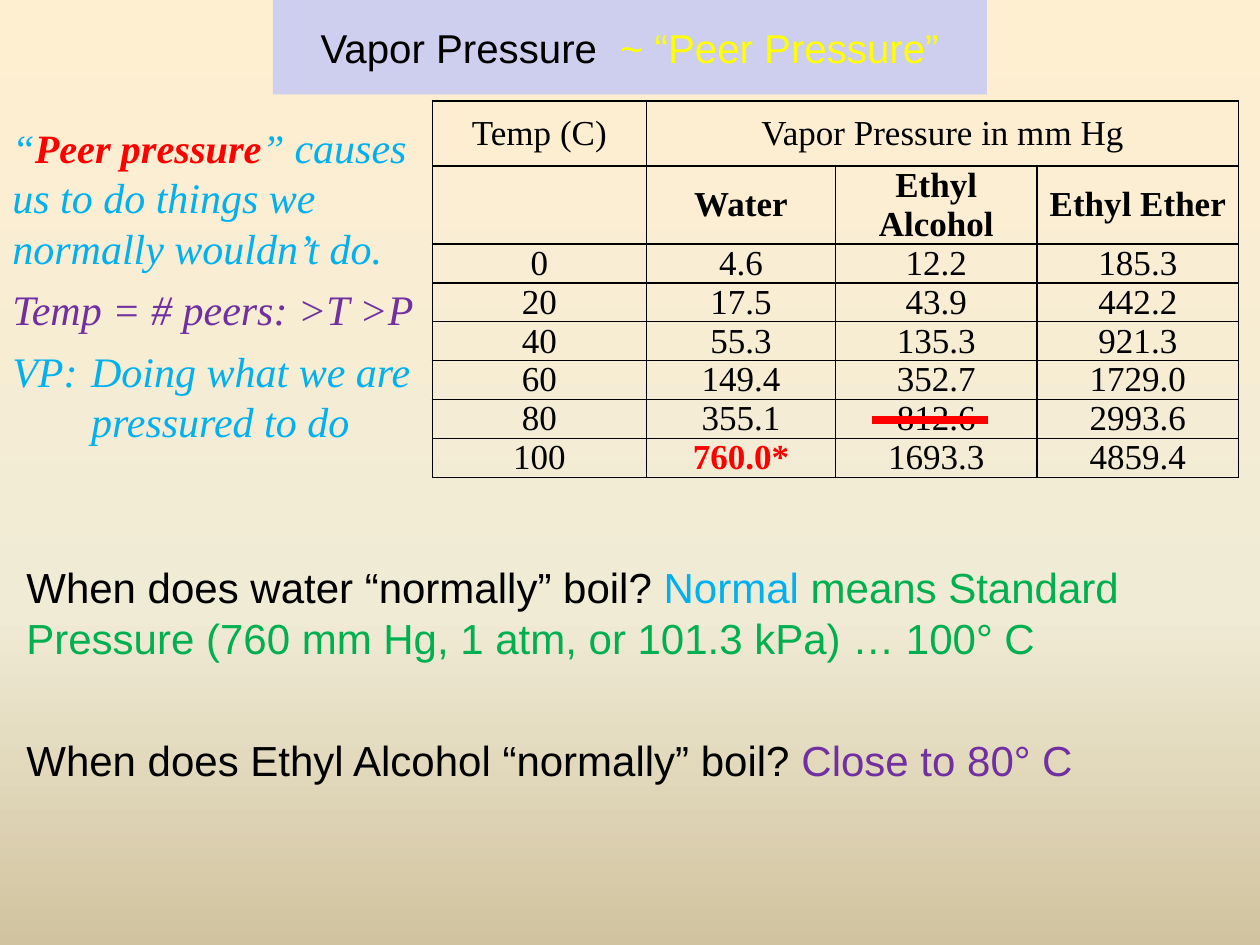
from copy import deepcopy

from lxml import etree
from pptx import Presentation
from pptx import util as u
from pptx.dml.color import RGBColor
from pptx.enum import shapes, text
from pptx.oxml.ns import qn

Pt = u.Pt
BLACK = RGBColor(0x00, 0x00, 0x00)
RED = RGBColor(0xFF, 0x00, 0x00)
YELLOW = RGBColor(0xFF, 0xFF, 0x00)
BLUE = RGBColor(0x00, 0xB0, 0xF0)
GREEN = RGBColor(0x00, 0xB0, 0x50)
PURPLE = RGBColor(0x70, 0x30, 0xA0)
LAVENDER = RGBColor(0xCE, 0xCE, 0xEF)
BACKGROUND = [(0, RGBColor(0xFF, 0xEF, 0xD1)),
              (0.65, RGBColor(0xF0, 0xEB, 0xD5)),
              (1, RGBColor(0xD1, 0xC3, 0x9F))]

SANS, SERIF = "Arial", "Times New Roman"
LINE = 29  # line pitch of the 24 pt text

READINGS = [
    ("0", "4.6", "12.2", "185.3"),
    ("20", "17.5", "43.9", "442.2"),
    ("40", "55.3", "135.3", "921.3"),
    ("60", "149.4", "352.7", "1729.0"),
    ("80", "355.1", "812.6", "2993.6"),
    ("100", "760.0*", "1693.3", "4859.4"),
]


def apply_format(target, values):
    for name, value in values.items():
        setattr(target, name, value)


def write_runs(paragraph, runs, font, layout):
    """Add (text, colour, font overrides) runs to a paragraph."""
    apply_format(paragraph, layout)
    for words, colour, *overrides in runs:
        run = paragraph.add_run()
        run.text = words
        apply_format(run.font, {**font, **(overrides[0] if overrides else {})})
        run.font.color.rgb = colour


def add_text(slide, box, paragraphs, font):
    """Add a text box; paragraphs are (layout, runs) pairs."""
    shape = slide.shapes.add_textbox(*map(Pt, box))
    frame = shape.text_frame
    frame.word_wrap = True
    for index, (layout, runs) in enumerate(paragraphs):
        paragraph = frame.add_paragraph() if index else frame.paragraphs[0]
        write_runs(paragraph, runs, font, {"line_spacing": Pt(LINE), **layout})
    return shape


def paint_background(slide):
    fill = slide.background.fill
    fill.gradient()
    fill.gradient_angle = 270
    stop_list = next(slide.element.iter(qn("a:gsLst")))
    stop_list.append(deepcopy(stop_list[-1]))
    for stop, (position, colour) in zip(fill.gradient_stops, BACKGROUND):
        stop.position = position
        stop.color.rgb = colour


def add_title(slide, box):
    shape = slide.shapes.add_shape(shapes.MSO_SHAPE.RECTANGLE, *map(Pt, box))
    shape.shadow.inherit = False
    shape.fill.solid()
    shape.fill.fore_color.rgb = LAVENDER
    shape.line.fill.background()
    frame = shape.text_frame
    frame.vertical_anchor = text.MSO_ANCHOR.MIDDLE
    write_runs(frame.paragraphs[0],
               [("Vapor Pressure  ", BLACK), ("~ “Peer Pressure”", YELLOW)],
               {"name": SANS, "size": Pt(23)},
               {"alignment": text.PP_ALIGN.CENTER})


def add_analogy(slide, box):
    shape = add_text(slide, box, [
        ({}, [("“", BLUE, {"size": Pt(23)}),
              ("Peer pressure", RED, {"size": Pt(23), "bold": True}),
              ("” ", BLUE, {"size": Pt(23)}),
              ("causes us to do things we normally wouldn’t do.", BLUE)]),
        ({"space_before": Pt(6)}, [("Temp = # peers: >T >P", PURPLE)]),
        ({"space_before": Pt(6)},
         [("VP:\tDoing what we are pressured to do", BLUE)]),
    ], {"name": SERIF, "size": Pt(24), "italic": True})
    # Hanging indent for the definition
    properties = shape.text_frame.paragraphs[-1]._p.get_or_add_pPr()
    properties.set("marL", str(Pt(45)))
    properties.set("indent", str(-Pt(45)))


def add_questions(slide, box):
    add_text(slide, box, [
        ({}, [("When does water “normally” boil? ", BLACK),
              ("Normal", BLUE),
              (" means Standard Pressure (760 mm Hg, 1 atm, or 101.3 kPa) … 100° C",
               GREEN)]),
        ({"space_before": Pt(LINE + 12)},
         [("When does Ethyl Alcohol “normally” boil? ", BLACK),
          ("Close to 80° C", PURPLE)]),
    ], {"name": SANS, "size": Pt(24)})


def add_borders(cell):
    properties = cell._tc.get_or_add_tcPr()
    for index, side in enumerate(("lnL", "lnR", "lnT", "lnB")):
        line = etree.Element(qn(f"a:{side}"), w=str(Pt(1)))
        fill = etree.SubElement(line, qn("a:solidFill"))
        etree.SubElement(fill, qn("a:srgbClr"), val=str(BLACK))
        properties.insert(index, line)


def add_pressure_table(slide, box):
    left, top, width, height = box
    rows = [("Temp (C)", "Vapor Pressure in mm Hg", "", ""),
            ("", "Water", "Ethyl Alcohol", "Ethyl Ether"), *READINGS]
    widths = [122.4, 108, 115.2, 115.2]
    heights = [37.4, 44.4] + [22.2] * len(READINGS)
    table = slide.shapes.add_table(len(rows), len(widths),
                                   *map(Pt, box)).table
    apply_format(table, {"first_row": False, "horz_banding": False})
    for column, size in zip(table.columns, widths):
        column.width = Pt(size)
    for row, size in zip(table.rows, heights):
        row.height = Pt(size)
    table.cell(0, 1).merge(table.cell(0, 3))
    for row_index, values in enumerate(rows):
        for column_index, value in enumerate(values):
            cell = table.cell(row_index, column_index)
            apply_format(cell, {
                "margin_left": Pt(5), "margin_right": Pt(5),
                "margin_top": 0, "margin_bottom": 0,
                "vertical_anchor": text.MSO_ANCHOR.MIDDLE})
            cell.fill.background()
            add_borders(cell)
            if not value:
                continue
            boiling = value.endswith("*")
            write_runs(cell.text_frame.paragraphs[0],
                       [(value, RED if boiling else BLACK)],
                       {"name": SERIF, "size": Pt(20),
                        "bold": boiling or row_index == 1},
                       {"alignment": text.PP_ALIGN.CENTER,
                        "line_spacing": Pt(22.2)})

    # Strike out the ethyl alcohol reading at 80 degrees
    strike_left, strike_top = left + 251.3, top + 182.2
    strike = slide.shapes.add_connector(
        shapes.MSO_CONNECTOR.STRAIGHT,
        *map(Pt, (strike_left, strike_top, strike_left + 66.2, strike_top)))
    strike.line.color.rgb = RED
    strike.line.width = Pt(4.5)
    etree.SubElement(strike._element.spPr, qn("a:effectLst"))


def main():
    presentation = Presentation()
    presentation.slide_width, presentation.slide_height = Pt(720), Pt(540)
    slide = presentation.slides.add_slide(presentation.slide_layouts[6])
    paint_background(slide)
    add_questions(slide, (8, 317, 702, 136))
    add_title(slide, (156, 0, 408, 54))
    add_analogy(slide, (0, 65.5, 246, 194))
    add_pressure_table(slide, (247, 57.6, 460.8, 215))
    presentation.save("out.pptx")


if __name__ == "__main__":
    main()
